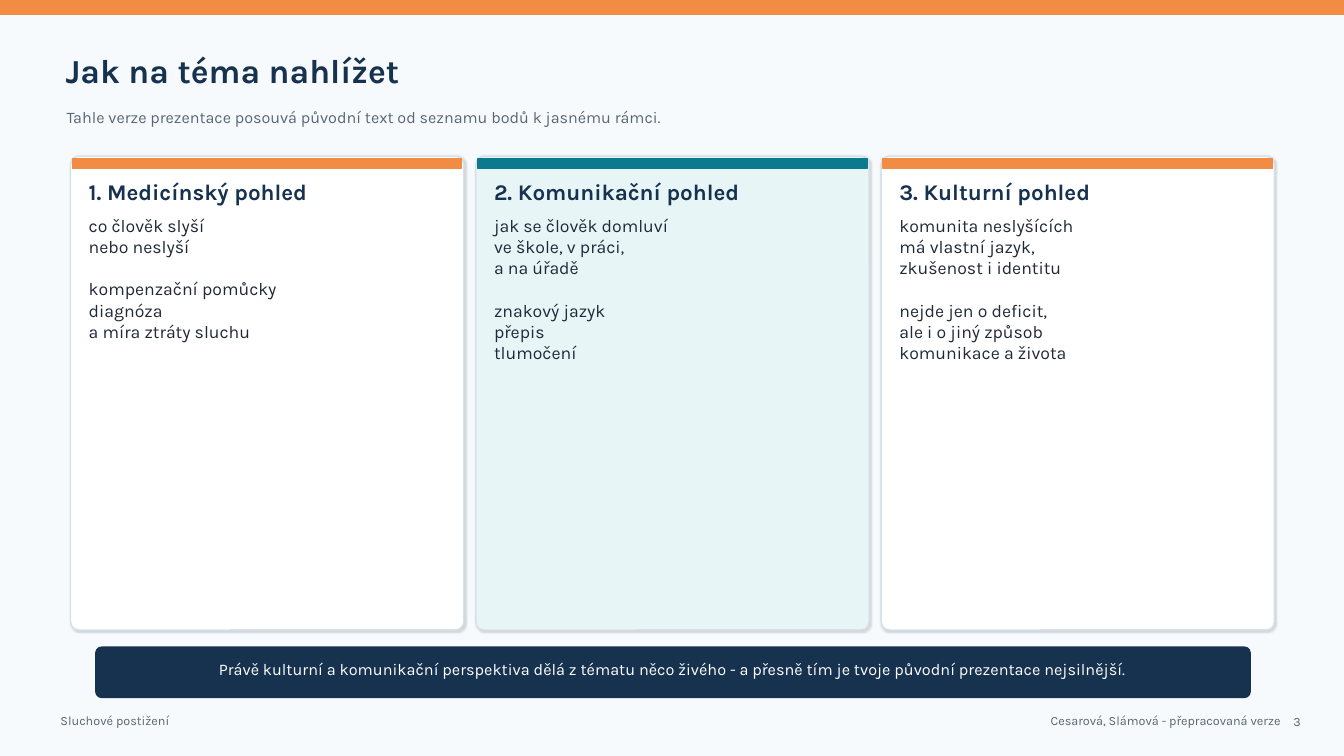
from lxml.etree import SubElement
from pptx import Presentation
from pptx.dml.color import RGBColor
from pptx.enum.shapes import MSO_SHAPE as Preset
from pptx.enum.text import MSO_ANCHOR as Anchor, MSO_AUTO_SIZE as AutoSize, PP_ALIGN as Align
from pptx.oxml.ns import qn
from pptx.util import Emu, Pt

PX = 9144  # 100 px to the inch

BACKGROUND = RGBColor(0xF7, 0xFA, 0xFC)
ORANGE = RGBColor(0xF2, 0x8C, 0x45)
TEAL = RGBColor(0x0B, 0x7A, 0x8F)
PALE_TEAL = RGBColor(0xE8, 0xF5, 0xF7)
NAVY = RGBColor(0x16, 0x32, 0x4F)
INK = RGBColor(0x1F, 0x29, 0x37)
GRAY = RGBColor(0x5B, 0x65, 0x73)
BORDER = RGBColor(0xD7, 0xE1, 0xEA)
WHITE = RGBColor(0xFF, 0xFF, 0xFF)

CARDS = [
    ("1. Medicínský pohled", WHITE, ORANGE,
     [["co člověk slyší", "nebo neslyší"],
      ["kompenzační pomůcky", "diagnóza", "a míra ztráty sluchu"]]),
    ("2. Komunikační pohled", PALE_TEAL, TEAL,
     [["jak se člověk domluví", "ve škole, v práci,", "a na úřadě"],
      ["znakový jazyk", "přepis", "tlumočení"]]),
    ("3. Kulturní pohled", WHITE, ORANGE,
     [["komunita neslyšících", "má vlastní jazyk,", "zkušenost i identitu"],
      ["nejde jen o deficit,", "ale i o jiný způsob", "komunikace a života"]]),
]


class SlideBuilder:
    font_name = "Karla"
    group_gap = Pt(15.1)  # one line of card text

    def __init__(self, slide):
        self.slide = slide

    def box(self, left, top, width, height, fill, line, radius=0, shadow=False):
        preset = Preset.ROUNDED_RECTANGLE if radius else Preset.RECTANGLE
        shape = self.slide.shapes.add_shape(
            preset, *(Emu(n * PX) for n in (left, top, width, height)))
        if radius:
            shape.adjustments[0] = radius
        shape.fill.solid()
        shape.fill.fore_color.rgb = fill
        shape.line.color.rgb = line
        shape.line.width = Pt(1)
        shape.shadow.inherit = False
        if shadow:
            self.cast_shadow(shape)

    def cast_shadow(self, shape):
        effects = shape.element.spPr.find(qn("a:effectLst"))
        outer = SubElement(effects, qn("a:outerShdw"), blurRad=str(Pt(1.5)),
                           dist=str(Pt(0.5)), dir="2700000", algn="bl", rotWithShape="0")
        color = SubElement(outer, qn("a:srgbClr"), val="000000")
        SubElement(color, qn("a:alpha"), val="14000")

    def text(self, left, top, width, height, groups, size, color, **style):
        shape = self.slide.shapes.add_textbox(
            *(Emu(n * PX) for n in (left, top, width, height)))
        self.fill_text(shape, groups, size, color, **style)

    def placeholder(self, shape, left, top, width, height, groups, size, color, **style):
        shape.left, shape.top, shape.width, shape.height = (
            Emu(n * PX) for n in (left, top, width, height))
        shape.element.getparent().append(shape.element)  # bring to front
        self.fill_text(shape, groups, size, color, **style)

    def fill_text(self, shape, groups, size, color, bold=False, align=Align.LEFT,
                  anchor=Anchor.MIDDLE, insets=(0, 0)):
        frame = shape.text_frame
        frame.word_wrap = True
        frame.auto_size = AutoSize.NONE
        frame.vertical_anchor = anchor
        frame.margin_left = frame.margin_right = Emu(insets[0] * PX)
        frame.margin_top = frame.margin_bottom = Emu(insets[1] * PX)
        paragraph = None
        for group in groups:
            for position, line in enumerate(group):
                first = paragraph is None
                paragraph = frame.paragraphs[0] if first else frame.add_paragraph()
                properties = paragraph._p.get_or_add_pPr()
                properties.set("marL", "0")
                properties.set("indent", "0")
                SubElement(properties, qn("a:buNone"))
                paragraph.alignment = align
                paragraph.space_before = Pt(0) if first or position else self.group_gap
                run = paragraph.add_run()
                run.text = line
                run.font.name = self.font_name
                run.font.size = Pt(size)
                run.font.bold = bold
                run.font.color.rgb = color


def main():
    presentation = Presentation()
    presentation.slide_width = Emu(1333 * PX)
    presentation.slide_height = Emu(750 * PX)
    slide = presentation.slides.add_slide(presentation.slide_layouts.get_by_name("Comparison"))
    slide.background.fill.solid()
    slide.background.fill.fore_color.rgb = BACKGROUND
    builder = SlideBuilder(slide)
    title, subtitle, *bodies = list(slide.placeholders)[:5]

    # Top band and footer
    builder.box(0, 0, 1333, 14, ORANGE, ORANGE)
    builder.text(60, 704, 440, 22, [["Sluchové postižení"]], 9, GRAY)
    builder.text(830, 704, 440, 22, [["Cesarová, Slámová - přepracovaná verze"]], 9, GRAY,
                 align=Align.RIGHT)

    # Title and subtitle
    builder.placeholder(title, 65, 42, 880, 55, [["Jak na téma nahlížet"]], 24, NAVY, bold=True)
    builder.placeholder(
        subtitle, 66, 98, 1080, 36,
        [["Tahle verze prezentace posouvá původní text od seznamu bodů k jasnému rámci."]],
        11.5, GRAY)

    # Three cards
    for column, (heading, fill, accent, groups) in enumerate(CARDS):
        left = 70 + column * 402
        builder.box(left, 155, 390, 470, fill, BORDER, radius=0.021, shadow=True)
        builder.box(left + 2, 157, 386, 10, accent, accent)
        builder.text(left + 18, 173, 354, 34, [[heading]], 16, NAVY, bold=True)
        builder.placeholder(bodies[column], left + 18, 213, 354, 398, groups, 12.6, INK,
                            anchor=Anchor.TOP)

    # Closing message
    builder.box(95, 642, 1145, 50, NAVY, NAVY, radius=0.12)
    builder.text(
        115, 655, 1105, 18,
        [["Právě kulturní a komunikační perspektiva dělá z tématu něco živého"
          " - a přesně tím je tvoje původní prezentace nejsilnější."]],
        11.6, WHITE, align=Align.CENTER)

    # Page number
    builder.text(1265, 703, 35, 22, [["3"]], 9, GRAY, align=Align.RIGHT,
                 anchor=Anchor.TOP, insets=(10, 5))

    presentation.save("out.pptx")


if __name__ == "__main__":
    main()
